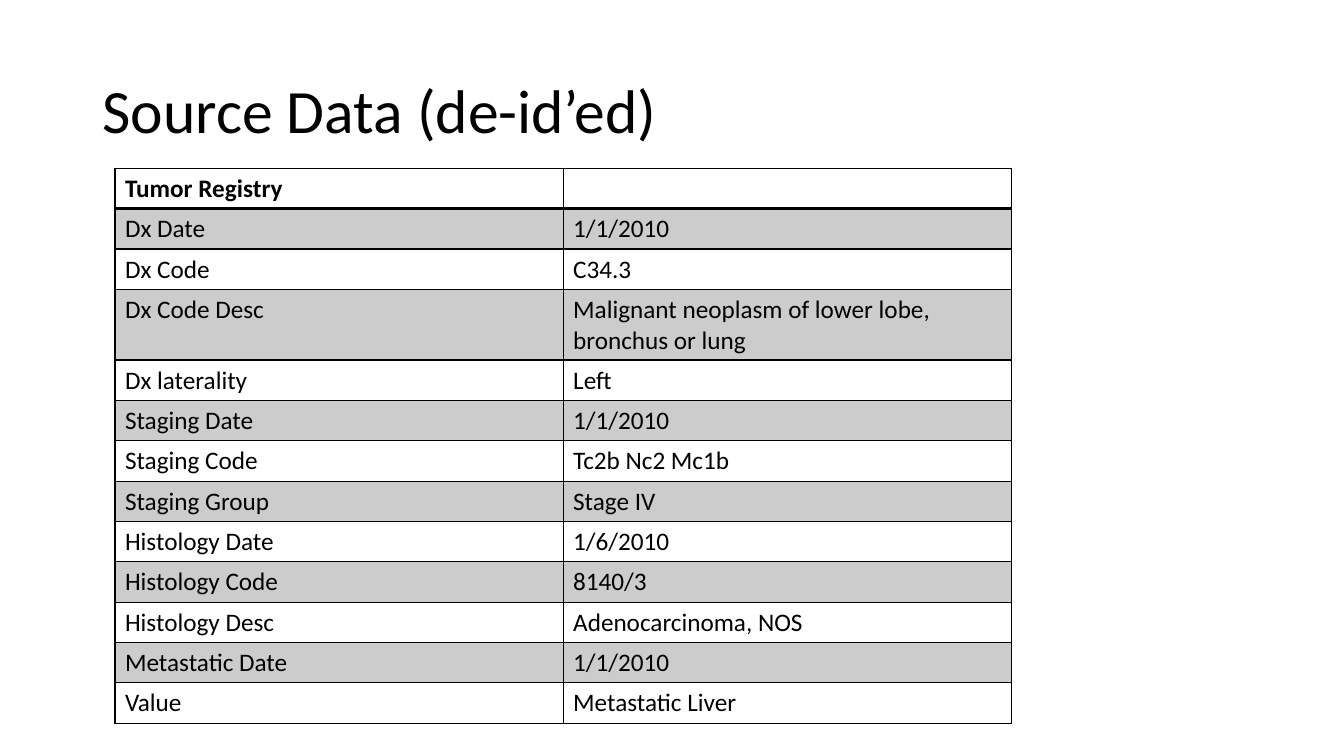
from dataclasses import dataclass

from lxml.etree import SubElement
from pptx import Presentation
from pptx.dml.color import RGBColor
from pptx.enum.text import MSO_ANCHOR
from pptx.oxml.ns import qn
from pptx.util import Inches, Pt


@dataclass(frozen=True)
class Theme:
    font: str = "Calibri"
    ink: str = "000000"
    band_opacity: int = 20
    title_size: int = 44
    body_size: int = 18
    border: int = 1
    header_border: int = 2


THEME = Theme()

REGISTRY = [
    ("Tumor Registry", ""),
    ("Dx Date", "1/1/2010"),
    ("Dx Code", "C34.3"),
    ("Dx Code Desc", "Malignant neoplasm of lower lobe, bronchus or lung"),
    ("Dx laterality", "Left"),
    ("Staging Date", "1/1/2010"),
    ("Staging Code", "Tc2b Nc2 Mc1b"),
    ("Staging Group", "Stage IV"),
    ("Histology Date", "1/6/2010"),
    ("Histology Code", "8140/3"),
    ("Histology Desc", "Adenocarcinoma, NOS"),
    ("Metastatic Date", "1/1/2010"),
    ("Value", "Metastatic Liver"),
]


def style_text(para, size, bold=False):
    for span in para.runs:
        span.font.name = THEME.font
        span.font.size = Pt(size)
        span.font.bold = bold
        span.font.color.rgb = RGBColor.from_string(THEME.ink)


def add_title(page, text):
    box = page.shapes.add_textbox(Inches(0.92), Inches(0.4), Inches(11.5), Inches(1.45))
    frame = box.text_frame
    frame.word_wrap = True
    frame.vertical_anchor = MSO_ANCHOR.MIDDLE
    frame.text = text
    para = frame.paragraphs[0]
    para.line_spacing = 0.9
    style_text(para, THEME.title_size)


def set_borders(cell, top, bottom):
    """Draw all four sides; must run before the cell gets its fill."""
    properties = cell._tc.get_or_add_tcPr()
    widths = {"lnL": THEME.border, "lnR": THEME.border, "lnT": top, "lnB": bottom}
    for side, width in widths.items():
        line = SubElement(properties, qn(f"a:{side}"), w=str(Pt(width)))
        fill = SubElement(line, qn("a:solidFill"))
        SubElement(fill, qn("a:srgbClr"), val=THEME.ink)


def set_band(cell, shaded):
    """Fill with translucent ink on shaded rows, with nothing on the others."""
    if not shaded:
        cell.fill.background()
        return
    cell.fill.solid()
    cell.fill.fore_color.rgb = RGBColor.from_string(THEME.ink)
    color = cell._tc.tcPr.find(qn("a:solidFill")).find(qn("a:srgbClr"))
    SubElement(color, qn("a:alpha"), val=str(THEME.band_opacity * 1000))


def add_registry_table(page, records):
    row_height = Inches(0.4)
    frame = page.shapes.add_table(
        len(records), 2, Inches(1.14), Inches(1.67), Inches(8.89), row_height * len(records)
    )
    table = frame.table
    for row, record in enumerate(records):
        table.rows[row].height = row_height
        top = THEME.header_border if row == 1 else THEME.border
        bottom = THEME.header_border if row == 0 else THEME.border
        for column, text in enumerate(record):
            cell = table.cell(row, column)
            cell.text_frame.text = text
            style_text(cell.text_frame.paragraphs[0], THEME.body_size, bold=row == 0)
            set_borders(cell, top, bottom)
            set_band(cell, shaded=row % 2 == 1)


def main():
    deck = Presentation()
    deck.slide_width = Inches(13.33)
    deck.slide_height = Inches(7.5)
    page = deck.slides.add_slide(deck.slide_layouts[6])
    add_title(page, "Source Data (de-id’ed)")
    add_registry_table(page, REGISTRY)
    deck.save("out.pptx")


if __name__ == "__main__":
    main()
